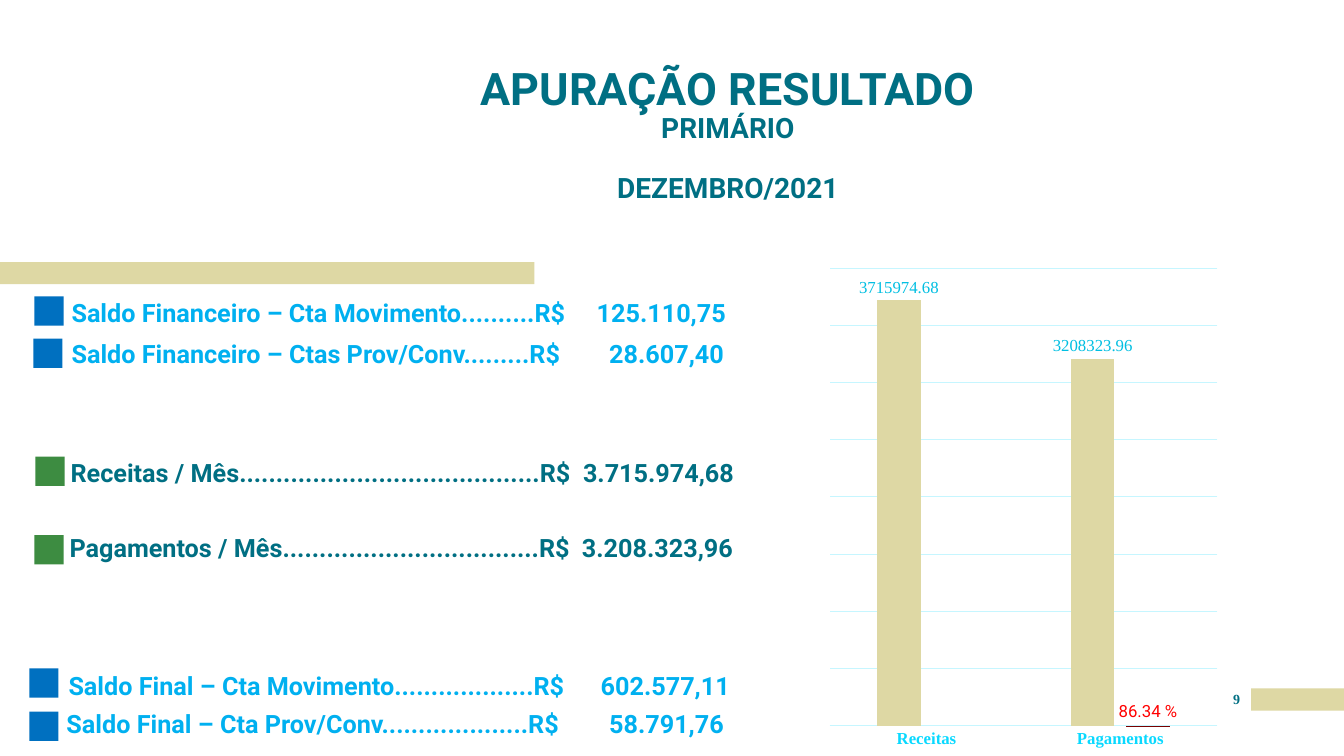
from lxml.etree import SubElement
from pptx import Presentation
from pptx.chart.data import CategoryChartData
from pptx.dml.color import RGBColor
from pptx.enum.chart import XL_CHART_TYPE, XL_LABEL_POSITION, XL_TICK_MARK
from pptx.enum.shapes import MSO_SHAPE
from pptx.enum.text import MSO_ANCHOR, PP_ALIGN
from pptx.oxml import parse_xml
from pptx.oxml.ns import nsdecls, qn
from pptx.util import Inches, Pt

COLORS = {
    "sand": "DED8A4", "teal": "006F83", "blue": "0070C0", "sky": "00B0F0",
    "green": "3D8C41", "grid": "C6F6FF", "cyan": "09D9FF", "label": "00BFE2",
    "wine": "790000", "red": "FF0000",
}
SANS, SERIF = "Roboto", "Times New Roman"


def color(name):
    return RGBColor.from_string(COLORS[name])


class Page:
    """Style and current slide."""

    def __init__(self, slide):
        self.slide = slide

    def font(self, font, size, tint, face=SANS, bold=True):
        font.size, font.name, font.bold = Pt(size), face, bold
        font.color.rgb = color(tint)

    def block(self, box, tint):
        shape = self.slide.shapes.add_shape(MSO_SHAPE.RECTANGLE, *map(Inches, box))
        shape.shadow.inherit = False
        shape.fill.solid()
        shape.fill.fore_color.rgb = color(tint)
        shape.line.fill.background()

    def text(self, box, lines, tint, face=SANS, align=PP_ALIGN.LEFT,
             anchor=MSO_ANCHOR.BOTTOM, foot=0, space=0.9):
        """Each line is (text, size, points before)."""
        frame = self.slide.shapes.add_textbox(*map(Inches, box)).text_frame
        frame.word_wrap, frame.vertical_anchor = True, anchor
        frame.margin_left = frame.margin_right = frame.margin_top = 0
        frame.margin_bottom = Inches(foot)
        for i, (words, size, before) in enumerate(lines):
            para = frame.add_paragraph() if i else frame.paragraphs[0]
            para.text = words
            para.alignment, para.line_spacing = align, space
            para.space_before = Pt(before)
            for run in para.runs:
                self.font(run.font, size, tint, face)
        return frame

    def amount(self, box, label, value, end, tint):
        """A label and a value set flush right at the given edge."""
        frame = self.text(box, [(f"{label}R$\t{value}", 18, 6)], tint)
        props = frame.paragraphs[0].runs[0].font  # keeps run style as is
        props.italic = False
        para = frame.paragraphs[0]
        tabs = SubElement(para.line_spacing and para.runs[0]._r.getparent().pPr,
                          qn("a:tabLst"))
        SubElement(tabs, qn("a:tab"), pos=str(Inches(end - box[0])), algn="r")

    def series(self, item, fill, tint, face, form):
        item.format.fill.solid()
        item.format.fill.fore_color.rgb = color(fill)
        labels = item.data_labels
        labels.show_value = True
        labels.position = XL_LABEL_POSITION.OUTSIDE_END
        labels.number_format, labels.number_format_is_linked = form, False
        self.font(labels.font, 12, tint, face, False)

    def chart(self, box, cats, rows, plot):
        data = CategoryChartData()
        data.categories = cats
        for name, vals, *_ in rows:
            data.add_series(name, vals)
        chart = self.slide.shapes.add_chart(
            XL_CHART_TYPE.COLUMN_CLUSTERED, *map(Inches, box), data).chart
        chart.has_legend = chart.has_title = False
        self.font(chart.font, 10, "teal", SERIF, False)

        # Bars
        bars = chart.plots[0]
        bars.gap_width, bars.overlap = 219, -27
        bars.vary_by_categories = False
        for item, (_, _, *look) in zip(bars.series, rows):
            self.series(item, *look)

        # Axes
        axis = chart.category_axis
        axis.major_tick_mark = axis.minor_tick_mark = XL_TICK_MARK.NONE
        self.font(axis.tick_labels.font, 12, "cyan", SERIF)
        scale = chart.value_axis
        scale.minimum_scale, scale.maximum_scale = 0, 4000000
        scale.major_unit = 500000
        scale.has_major_gridlines = True
        scale.visible = False
        for line in (axis.format.line, scale.major_gridlines.format.line):
            line.color.rgb = color("grid")
            line.width = Pt(0.75)

        # Plot area
        area = chart.element.xpath("c:chart/c:plotArea")[0]
        for old in area.findall(qn("c:layout")):
            area.remove(old)
        sizes = "".join(f'<c:{k} val="{v}"/>' for k, v in zip("xywh", plot))
        area.insert(0, parse_xml(
            f'<c:layout {nsdecls("c")}><c:manualLayout>'
            '<c:layoutTarget val="inner"/><c:xMode val="edge"/>'
            f'<c:yMode val="edge"/>{sizes}</c:manualLayout></c:layout>'))


def main():
    prs = Presentation()
    prs.slide_width, prs.slide_height = Inches(13.33), Inches(7.5)
    page = Page(prs.slides.add_slide(prs.slide_layouts[6]))

    # Bands
    page.block((12.41, 6.83, 0.92, 0.22), "sand")
    page.block((0, 2.6, 5.3, 0.22), "sand")

    # Title
    page.text((4.05, 0.11, 6.34, 2.25),
              [("APURAÇÃO RESULTADO", 32, 0), ("PRIMÁRIO", 20, 0),
               ("DEZEMBRO/2021", 20, 21)],
              "teal", align=PP_ALIGN.CENTER, foot=0.33)

    # Balances: marker spot, text box, label, value, right edge, colours
    rows = [
        (0.34, 2.94, (0.71, 2.87, 8.06, 0.38),
         "Saldo Financeiro – Cta Movimento..........", "125.110,75", 7.2, "blue", "sky"),
        (0.33, 3.36, (0.71, 3.28, 7.79, 0.38),
         "Saldo Financeiro – Ctas Prov/Conv.........", "28.607,40", 7.18, "blue", "sky"),
        (0.35, 4.53, (0.7, 4.46, 7.32, 0.38),
         "Receitas / Mês.........................................",
         "3.715.974,68", 7.28, "green", "teal"),
        (0.34, 5.31, (0.69, 5.2, 7.4, 0.38),
         "Pagamentos / Mês...................................",
         "3.208.323,96", 7.27, "green", "teal"),
        (0.29, 6.63, (0.68, 6.5, 7.43, 0.45),
         "Saldo Final – Cta Movimento...................", "602.577,11", 7.24, "blue", "sky"),
        (0.29, 7.06, (0.66, 6.95, 7.73, 0.38),
         "Saldo Final – Cta Prov/Conv....................", "58.791,76", 7.18, "blue", "sky"),
    ]
    for left, top, box, label, value, end, mark, tint in rows:
        page.block((left, top, 0.29, 0.29), mark)
        page.amount(box, label, value, end, tint)

    # Chart
    page.chart((7.44, 2.51, 4.93, 4.99), ["Receitas", "Pagamentos"],
               [("Series 1", (3715974.68, 3208323.96), "sand", "label", SERIF, "0.00"),
                ("Series 2", (None, 86.34), "wine", "red", SANS, '0.00" %"')],
               (0.16, 0.03, 0.78, 0.91))

    # Page number
    page.text((12.12, 6.85, 0.29, 0.25), [("9", 10, 0)], "teal", SERIF,
              PP_ALIGN.CENTER, MSO_ANCHOR.TOP, space=1)

    prs.save("out.pptx")


if __name__ == "__main__":
    main()
